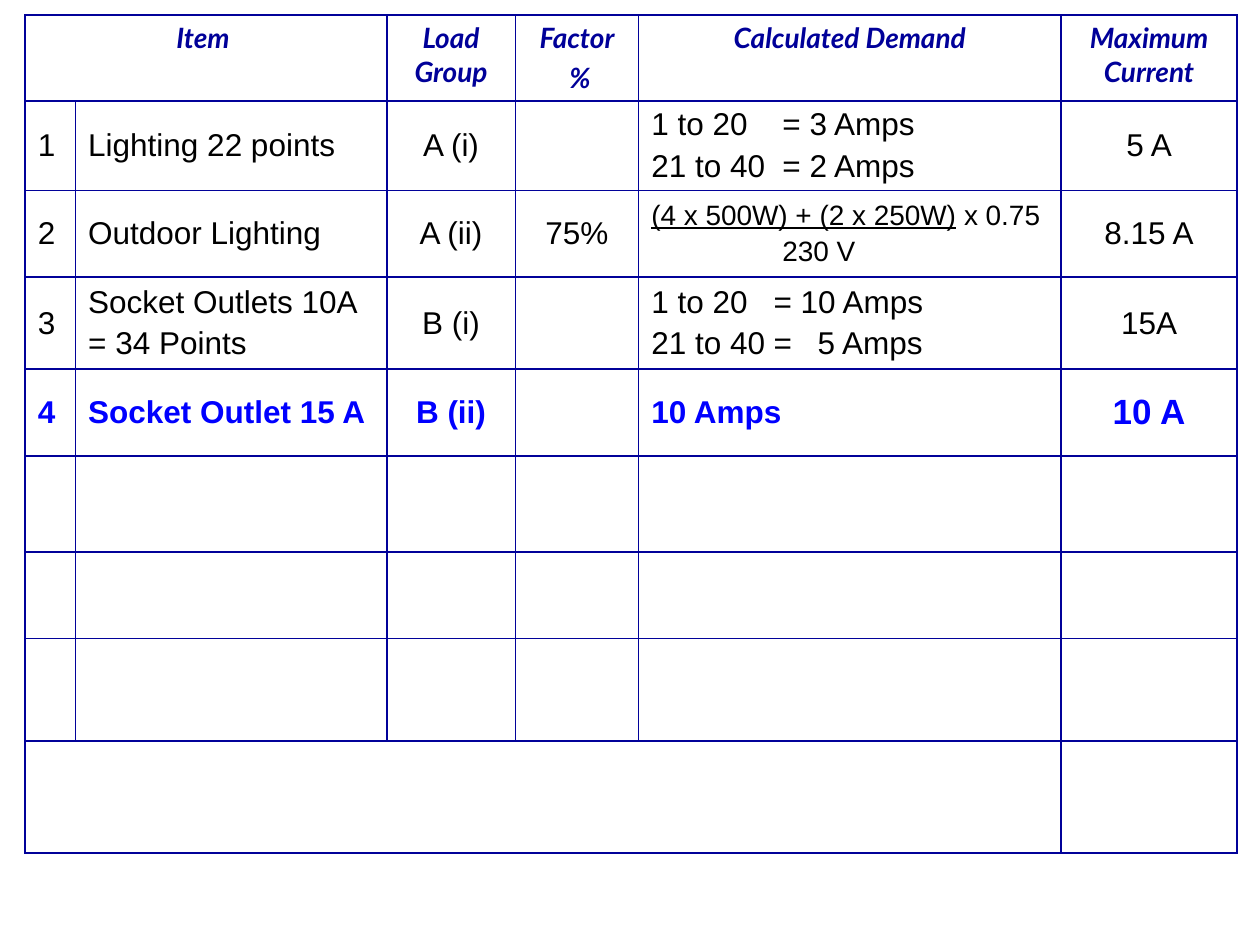
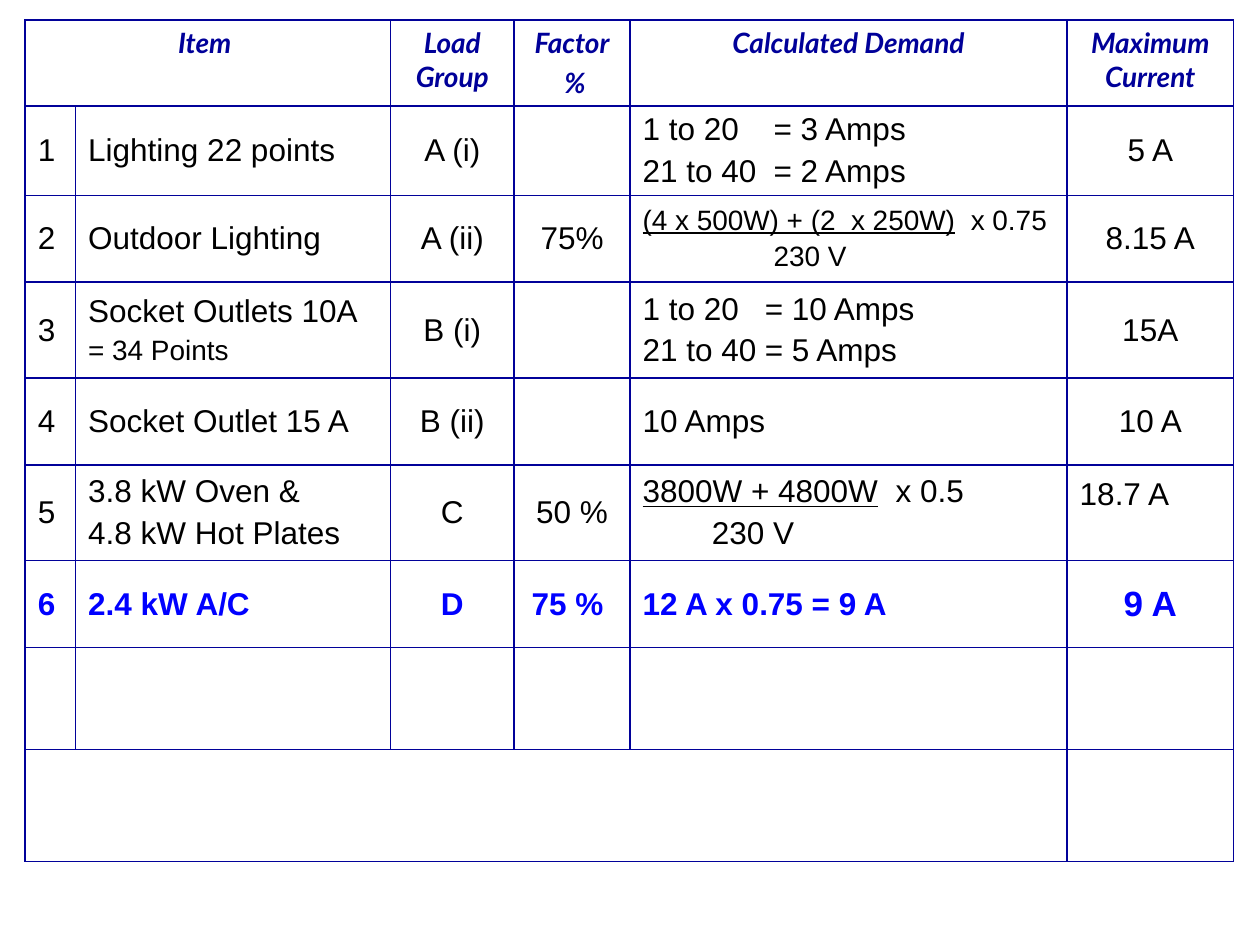
from dataclasses import dataclass

from lxml.etree import SubElement
from pptx import Presentation
from pptx.dml.color import RGBColor
from pptx.enum.text import MSO_VERTICAL_ANCHOR as Anchor, PP_PARAGRAPH_ALIGNMENT as Align
from pptx.oxml.ns import qn
from pptx.util import Inches, Pt

COLORS = {"border": "010199", "header": "000099", "body": "000000", "highlight": "0000FF"}
HEADER_FONT, BODY_FONT = "Lato", "Arial"
HEADER_SIZE, SMALL_SIZE, BODY_SIZE, RESULT_SIZE = 16, 16, 18, 20
SPACE_SHARE = 0.2
BORDER_WIDTH = 1
COLUMN_ALIGNMENTS = (Align.LEFT, Align.LEFT, Align.CENTER, Align.CENTER, Align.LEFT, Align.CENTER)
TOTAL_ROW, CURRENT_COLUMN = 8, 5
UNFILLED = ("",) * 5


@dataclass(frozen=True)
class Line:
    """One paragraph of a cell, with an optional underlined start."""

    text: str
    underlined: str = ""
    size: int = BODY_SIZE
    indent: float = 0
    tabs: tuple[float, ...] = ()


@dataclass(frozen=True)
class Raised:
    """A left-aligned entry lifted above the middle of its cell."""

    text: str
    lift: float


Entry = str | Raised | tuple[Line, ...]
Row = tuple[Entry, ...]


@dataclass(frozen=True)
class DemandTable:
    """Grid and load rows of one maximum demand table."""

    top: float
    columns: tuple[float, ...]
    rows: tuple[float, ...]
    loads: tuple[Row, ...]
    highlighted: int


HEADER: Row = ("Item ", "", "Load Group", (Line("Factor"), Line(" %")), "Calculated Demand", "Maximum Current")


def fraction(top: str, factor: str, bottom: str, indent: float, size: int) -> tuple[Line, ...]:
    """Return a calculation with an underlined numerator over its divisor."""
    return Line(factor, top, size), Line(bottom, size=size, indent=indent)


def lighting() -> Row:
    """Return the indoor lighting row."""
    demand = tuple(Line(text, tabs=(1.04,)) for text in ("1 to 20\t= 3 Amps", "21 to 40\t= 2 Amps"))
    return "Lighting 22 points", "A (i)", "", demand, "5 A"


def outdoor(numerator: str, factor: str) -> Row:
    """Return the outdoor lighting row."""
    demand = fraction(numerator, factor, "230 V", 1.04, SMALL_SIZE)
    return "Outdoor Lighting", "A (ii)", "75%", demand, "8.15 A"


def sockets(points_size: int, second_range: str) -> Row:
    """Return the 10 A socket outlet row."""
    item = (Line("Socket Outlets 10A"), Line("= 34 Points", size=points_size))
    demand = tuple(Line(text, tabs=(0.97, 1.32)) for text in ("1 to 20\t= 10 Amps", second_range))
    return item, "B (i)", "", demand, "15A"


LARGE_SOCKET: Row = ("Socket Outlet 15 A", "B (ii)", "", "10 Amps", "10 A")
COOKING: Row = (
    (Line("3.8 kW Oven &"), Line("4.8 kW Hot Plates")), "C", "50 %",
    fraction("3800W + 4800W", "  x 0.5", "230 V", 0.55, BODY_SIZE), Raised("18.7 A", 0.29),
)
COOLING: Row = ("2.4 kW A/C", "D", "75 % ", "12 A x 0.75 = 9 A", "9 A")

TABLES = (
    DemandTable(
        top=0.12,
        columns=(0.4, 2.47, 1.02, 0.98, 3.35, 1.4),
        rows=(0.68, 0.71, 0.69, 0.73, 0.69, 0.76, 0.69, 0.81, 0.89),
        loads=(
            lighting(),
            outdoor("(4 x 500W) + (2 x 250W)", " x 0.75"),
            sockets(BODY_SIZE, "21 to 40\t=\t5 Amps"),
            LARGE_SOCKET,
        ),
        highlighted=4,
    ),
    DemandTable(
        top=0.16,
        columns=(0.4, 2.5, 0.98, 0.92, 3.47, 1.32),
        rows=(0.68, 0.71, 0.69, 0.76, 0.69, 0.76, 0.69, 0.81, 0.89),
        loads=(
            lighting(),
            outdoor("(4 x 500W) + (2  x 250W)", "  x 0.75"),
            sockets(SMALL_SIZE, "21 to 40\t= 5 Amps"),
            LARGE_SOCKET,
            COOKING,
            COOLING,
        ),
        highlighted=6,
    ),
)


def add_text(paragraph, text: str, *, font: str, size: int, color: str,
             bold: bool = False, italic: bool = False, underline: bool = False) -> None:
    """Add a formatted run to a paragraph."""
    run = paragraph.add_run()
    run.text = text
    run.font.name, run.font.size = font, Pt(size)
    run.font.bold, run.font.italic, run.font.underline = bold, italic, underline
    run.font.color.rgb = RGBColor.from_string(COLORS[color])


def draw_borders(cell) -> None:
    """Give a cell four solid borders and no fill."""
    properties = cell._tc.get_or_add_tcPr()
    for side in ("lnL", "lnR", "lnT", "lnB"):
        line = SubElement(properties, qn(f"a:{side}"), w=str(Pt(BORDER_WIDTH)))
        fill = SubElement(line, qn("a:solidFill"))
        SubElement(fill, qn("a:srgbClr"), val=COLORS["border"])
    cell.fill.background()


def set_layout(paragraph, line: Line, size: int, alignment: Align) -> None:
    """Set the alignment, spacing, indent and tab stops of a paragraph."""
    paragraph.alignment = alignment
    paragraph.space_before = Pt(size * SPACE_SHARE)
    properties = paragraph._p.get_or_add_pPr()
    properties.set("marL", str(Inches(line.indent)))
    if line.tabs:
        stops = SubElement(properties, qn("a:tabLst"))
        for position in line.tabs:
            SubElement(stops, qn("a:tab"), pos=str(Inches(position)), algn="l")


def fill_cell(cell, entry: Entry, alignment: Align, size: int | None = None, **style) -> None:
    """Write the lines of an entry into a cell."""
    if isinstance(entry, Raised):
        cell.margin_bottom += Inches(entry.lift)
        entry, alignment = entry.text, Align.LEFT
    if not entry:
        return
    lines = (Line(entry),) if isinstance(entry, str) else entry
    for index, line in enumerate(lines):
        frame = cell.text_frame
        paragraph = frame.add_paragraph() if index else frame.paragraphs[0]
        line_size = size or line.size
        set_layout(paragraph, line, line_size, alignment)
        for text, underline in ((line.underlined, True), (line.text, False)):
            if text:
                add_text(paragraph, text, size=line_size, underline=underline, **style)


def fill_header(table) -> None:
    """Write the column headings."""
    for column, entry in enumerate(HEADER):
        fill_cell(table.cell(0, column), entry, Align.CENTER, HEADER_SIZE,
                  font=HEADER_FONT, color="header", bold=True, italic=True)


def fill_load(table, number: int, load: Row, highlighted: bool) -> None:
    """Write one numbered load row."""
    color = "highlight" if highlighted else "body"
    for column, entry in enumerate((str(number), *load)):
        cell = table.cell(number, column)
        cell.vertical_anchor = Anchor.MIDDLE
        size = RESULT_SIZE if highlighted and column == CURRENT_COLUMN else None
        fill_cell(cell, entry, COLUMN_ALIGNMENTS[column], size,
                  font=BODY_FONT, color=color, bold=highlighted)


def add_demand_table(slide, demand: DemandTable) -> None:
    """Draw a maximum demand table on a slide."""
    table = slide.shapes.add_table(
        len(demand.rows), len(demand.columns), Inches(0.2), Inches(demand.top),
        Inches(sum(demand.columns)), Inches(sum(demand.rows)),
    ).table
    table.first_row = table.horz_banding = False
    for column, width in zip(table.columns, demand.columns):
        column.width = Inches(width)
    for row, height in zip(table.rows, demand.rows):
        row.height = Inches(height)
        for cell in row.cells:
            draw_borders(cell)
    table.cell(0, 0).merge(table.cell(0, 1))
    table.cell(TOTAL_ROW, 0).merge(table.cell(TOTAL_ROW, CURRENT_COLUMN - 1))
    fill_header(table)
    for number, load in enumerate(demand.loads, start=1):
        fill_load(table, number, load, number == demand.highlighted)


def main() -> None:
    """Build and save the presentation."""
    presentation = Presentation()
    presentation.slide_width, presentation.slide_height = Inches(10), Inches(7.5)
    for demand in TABLES:
        slide = presentation.slides.add_slide(presentation.slide_layouts[6])
        add_demand_table(slide, demand)
    presentation.save("out.pptx")


if __name__ == "__main__":
    main()
